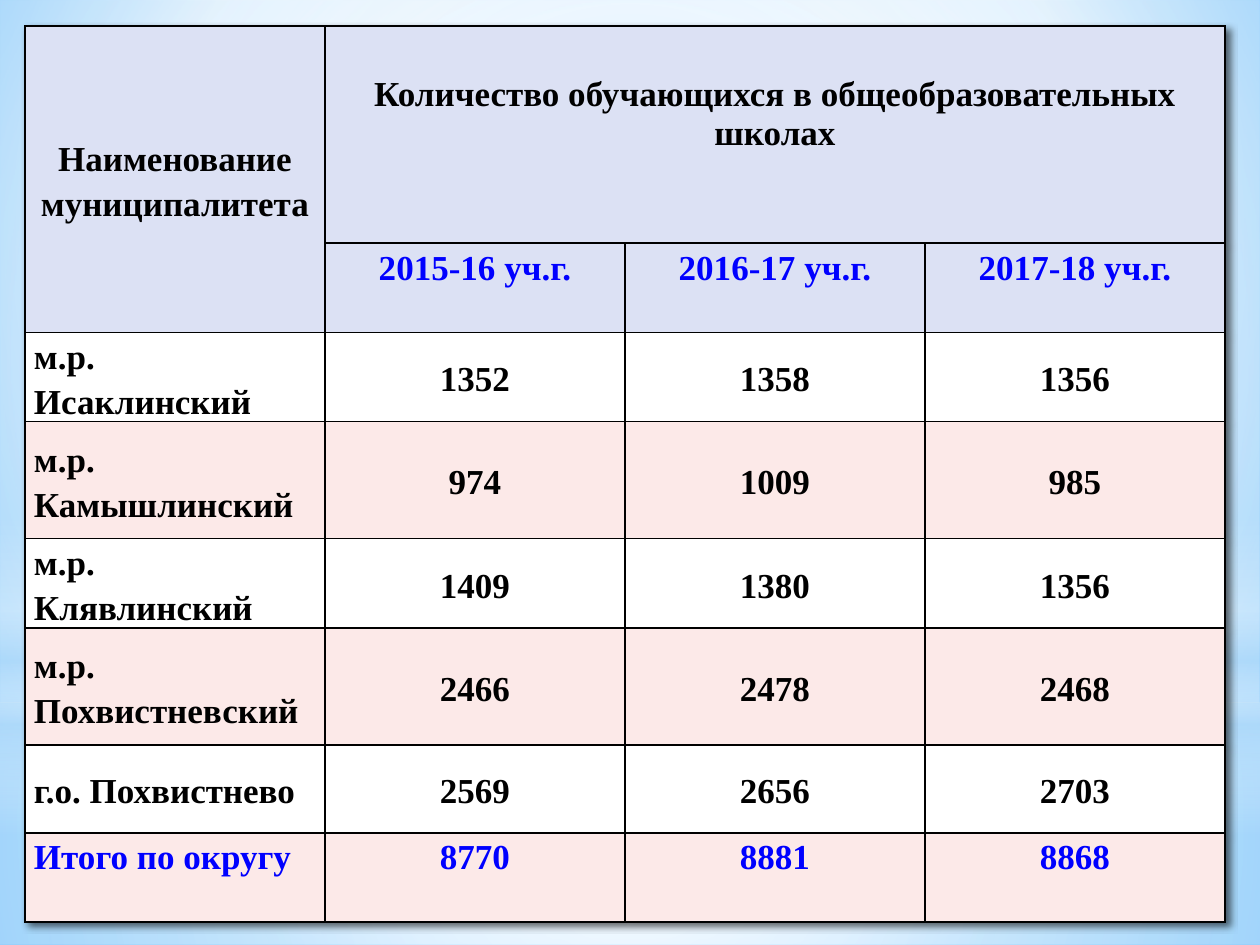
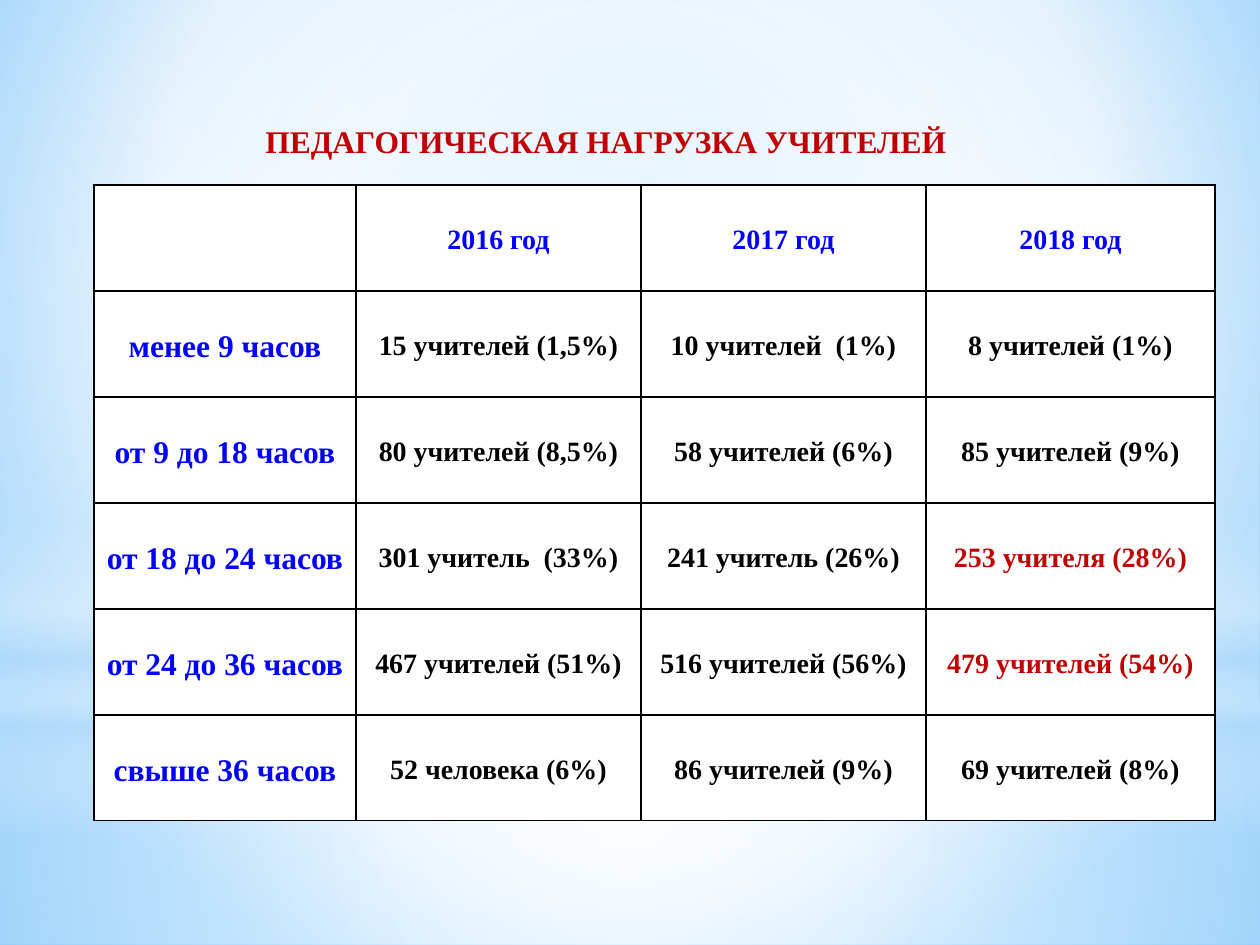
from pptx import Presentation
from pptx.dml.color import RGBColor
from pptx.enum.shapes import MSO_SHAPE
from pptx.enum.text import MSO_ANCHOR, PP_ALIGN
from pptx.oxml import parse_xml
from pptx.oxml.ns import nsdecls, qn
from pptx.util import Pt

FONT = "Times New Roman"
BLACK, BLUE, RED = "000000", "0000FF", "C00000"
WHITE, LILAC, PINK, SKY = "FFFFFF", "DCE1F4", "FCE9E8", "B4DCFA"
CENTRE = (50, 50, 50, 50)

PUPILS = [
    ("Наименование муниципалитета",
     "Количество обучающихся в общеобразовательных школах", "", ""),
    ("", "2015-16 уч.г.", "2016-17 уч.г.", "2017-18 уч.г."),
    ("м.р. Исаклинский", "1352", "1358", "1356"),
    ("м.р. Камышлинский", "974", "1009", "985"),
    ("м.р. Клявлинский", "1409", "1380", "1356"),
    ("м.р. Похвистневский", "2466", "2478", "2468"),
    ("г.о. Похвистнево", "2569", "2656", "2703"),
    ("Итого по округу", "8770", "8881", "8868"),
]
HOURS = [
    ("", "2016 год", "2017 год", "2018 год"),
    ("менее 9 часов", "15 учителей (1,5%)", "10 учителей  (1%)", "8 учителей (1%)"),
    ("от 9 до 18 часов", "80 учителей (8,5%)", "58 учителей (6%)", "85 учителей (9%)"),
    ("от 18 до 24 часов", "301 учитель  (33%)", "241 учитель (26%)", "253 учителя (28%)"),
    ("от 24 до 36 часов", "467 учителей (51%)", "516 учителей (56%)", "479 учителей (54%)"),
    ("свыше 36 часов", "52 человека (6%)", "86 учителей (9%)", "69 учителей (8%)"),
]


def px(n):
    return round(n * 914400 / 126)


def rgb(code):
    return RGBColor.from_string(code)


def blend(owner, stops, focus=None):
    """Swap the solid fill of an element for a gradient; no focus means top to bottom."""
    marks = "".join(
        f'<a:gs pos="{pos * 1000}"><a:srgbClr val="{code}">'
        f'<a:alpha val="{alpha * 1000}"/></a:srgbClr></a:gs>'
        for pos, code, alpha in stops)
    if focus:
        sides = " ".join(f'{side}="{n * 1000}"' for side, n in zip("ltrb", focus))
        course = f'<a:path path="circle"><a:fillToRect {sides}/></a:path>'
    else:
        course = '<a:lin ang="5400000" scaled="0"/>'
    solid = owner.find(qn("a:solidFill"))
    owner.replace(solid, parse_xml(
        f'<a:gradFill {nsdecls("a")} rotWithShape="1">'
        f'<a:gsLst>{marks}</a:gsLst>{course}</a:gradFill>'))


def dress(master, slide):
    """Give the master its backdrop; the bands are made on a slide and moved over."""
    master.background.fill.solid()
    blend(master.element.find(".//" + qn("p:bgPr")),
          [(0, "9ED5FF", 100), (60, WHITE, 100), (100, "5BB9FF", 100)], (20, 10, 20, 60))
    bands = [
        (MSO_SHAPE.RECTANGLE, 703, 242, CENTRE,
         [(0, WHITE, 91), (37, WHITE, 76), (100, SKY, 79)]),
        (MSO_SHAPE.RECTANGLE, 0, 703, CENTRE,
         [(0, WHITE, 89), (48, WHITE, 62), (100, SKY, 79)]),
        (MSO_SHAPE.RECTANGLE, 519, 315, None,
         [(0, WHITE, 0), (29, WHITE, 30), (45, SKY, 40),
          (55, WHITE, 26), (65, SKY, 60), (100, WHITE, 0)]),
        (MSO_SHAPE.OVAL, 220, 703, CENTRE, [(0, WHITE, 100), (56, WHITE, 0)]),
    ]
    for i, (kind, top, high, focus, stops) in enumerate(bands):
        band = slide.shapes.add_shape(kind, 0, px(top), px(1260), px(high))
        band.shadow.inherit = False
        band.line.fill.background()
        band.fill.solid()
        blend(band.element.spPr, stops, focus)
        band.element.find(".//" + qn("p:cNvPr")).set("id", str(20 + i))
        master.shapes.element.insert(2 + i, band.element)


def style(para, size, color):
    for run in para.runs:
        font = run.font
        font.name, font.size, font.bold = FONT, Pt(size), True
        font.color.rgb = rgb(color)


def write(cell, text, size, color, after, align=PP_ALIGN.CENTER):
    cell.margin_left = cell.margin_right = px(9)
    cell.margin_top = cell.margin_bottom = 0
    cell.vertical_anchor = MSO_ANCHOR.MIDDLE
    para = cell.text_frame.paragraphs[0]
    para.text = text
    para.alignment = align
    para.line_spacing = 1.15
    para.space_after = Pt(after)
    style(para, size, color)


def add_grid(slide, left, top, cols, rows):
    frame = slide.shapes.add_table(len(rows), len(cols), px(left), px(top),
                                   px(sum(cols)), px(sum(rows)))
    table = frame.table
    table.first_row = table.horz_banding = False
    for col, wide in zip(table.columns, cols):
        col.width = px(wide)
    for row, high in zip(table.rows, rows):
        row.height = px(high)
    for tc in frame.element.iter(qn("a:tc")):
        props = tc.get_or_add_tcPr()
        for i, side in enumerate("LRTB"):
            props.insert(i, parse_xml(
                f'<a:ln{side} {nsdecls("a")} w="12700"><a:solidFill>'
                f'<a:srgbClr val="{BLACK}"/></a:solidFill></a:ln{side}>'))
    return frame


def paint(cell, color):
    cell.fill.solid()
    cell.fill.fore_color.rgb = rgb(color)


def cast(frame):
    """Put a soft shadow under a table."""
    frame.element.find(".//" + qn("a:tblPr")).insert(0, parse_xml(
        f'<a:effectLst {nsdecls("a")}><a:outerShdw blurRad="50800" dist="38100" '
        'dir="2700000" algn="tl" rotWithShape="0"><a:srgbClr val="000000">'
        '<a:alpha val="60000"/></a:srgbClr></a:outerShdw></a:effectLst>'))


def show_pupils(slide, left, top):
    frame = add_grid(slide, left, top, [300] * 4, [217, 89, 89, 117, 89, 117, 88, 89])
    table = frame.table
    last = len(PUPILS) - 1
    for r, row in enumerate(PUPILS):
        fill = LILAC if r < 2 else PINK if r % 2 else WHITE
        for c, text in enumerate(row):
            cell = table.cell(r, c)
            paint(cell, fill)
            align = PP_ALIGN.LEFT if r > 1 and c == 0 else PP_ALIGN.CENTER
            write(cell, text, 20, BLUE if r in (1, last) else BLACK, 10, align)
            if r in (1, last):
                cell.vertical_anchor = MSO_ANCHOR.TOP
    head = table.cell(0, 1)
    head.margin_left = head.margin_right = px(13)
    head.margin_bottom = px(40)
    para = head.text_frame.paragraphs[0]
    para.line_spacing, para.space_after = 1.0, Pt(0)
    table.cell(0, 0).merge(table.cell(1, 0))
    head.merge(table.cell(0, 3))
    cast(frame)


def show_hours(slide, left, top):
    table = add_grid(slide, left, top, [262, 285, 285, 289], [106] * len(HOURS)).table
    for r, row in enumerate(HOURS):
        for c, text in enumerate(row):
            paint(table.cell(r, c), WHITE)
            color = BLUE if r == 0 or c == 0 else RED if c == 3 and r in (3, 4) else BLACK
            write(table.cell(r, c), text, 16 if c else 18, color, 6)


def add_title(slide, left, top, text):
    box = slide.shapes.add_textbox(px(left), px(top), px(713), px(50))
    box.text_frame.word_wrap = False
    box.text_frame.text = text
    style(box.text_frame.paragraphs[0], 18, RED)


def main():
    deck = Presentation()
    deck.slide_width, deck.slide_height = px(1260), px(945)
    blank = deck.slide_layouts[6]
    pupils, hours = [deck.slides.add_slide(blank) for _ in range(2)]
    dress(deck.slide_master, pupils)
    show_pupils(pupils, 25, 26)
    show_hours(hours, 94, 185)
    add_title(hours, 253, 116, "ПЕДАГОГИЧЕСКАЯ НАГРУЗКА УЧИТЕЛЕЙ")
    deck.save("out.pptx")


if __name__ == "__main__":
    main()
